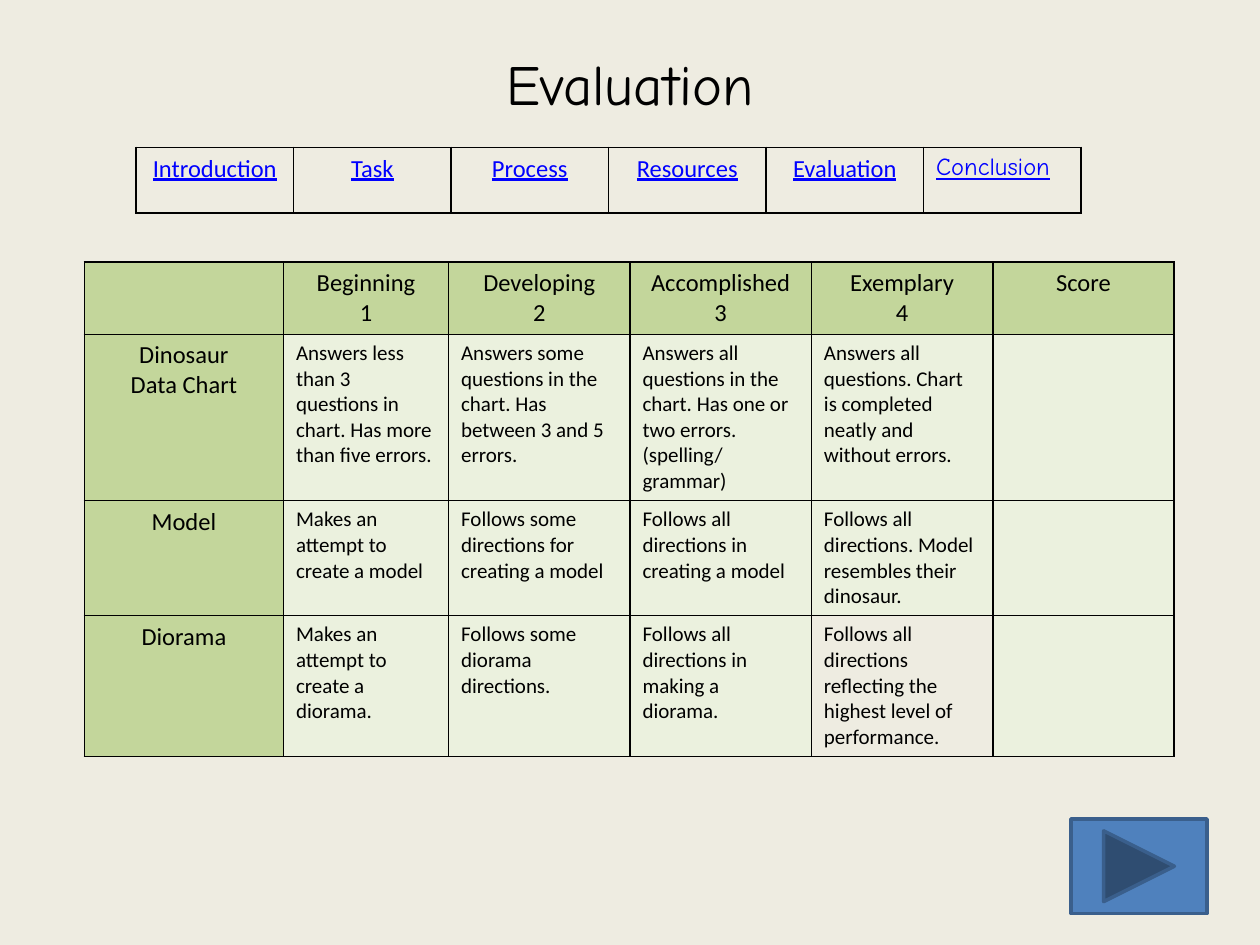
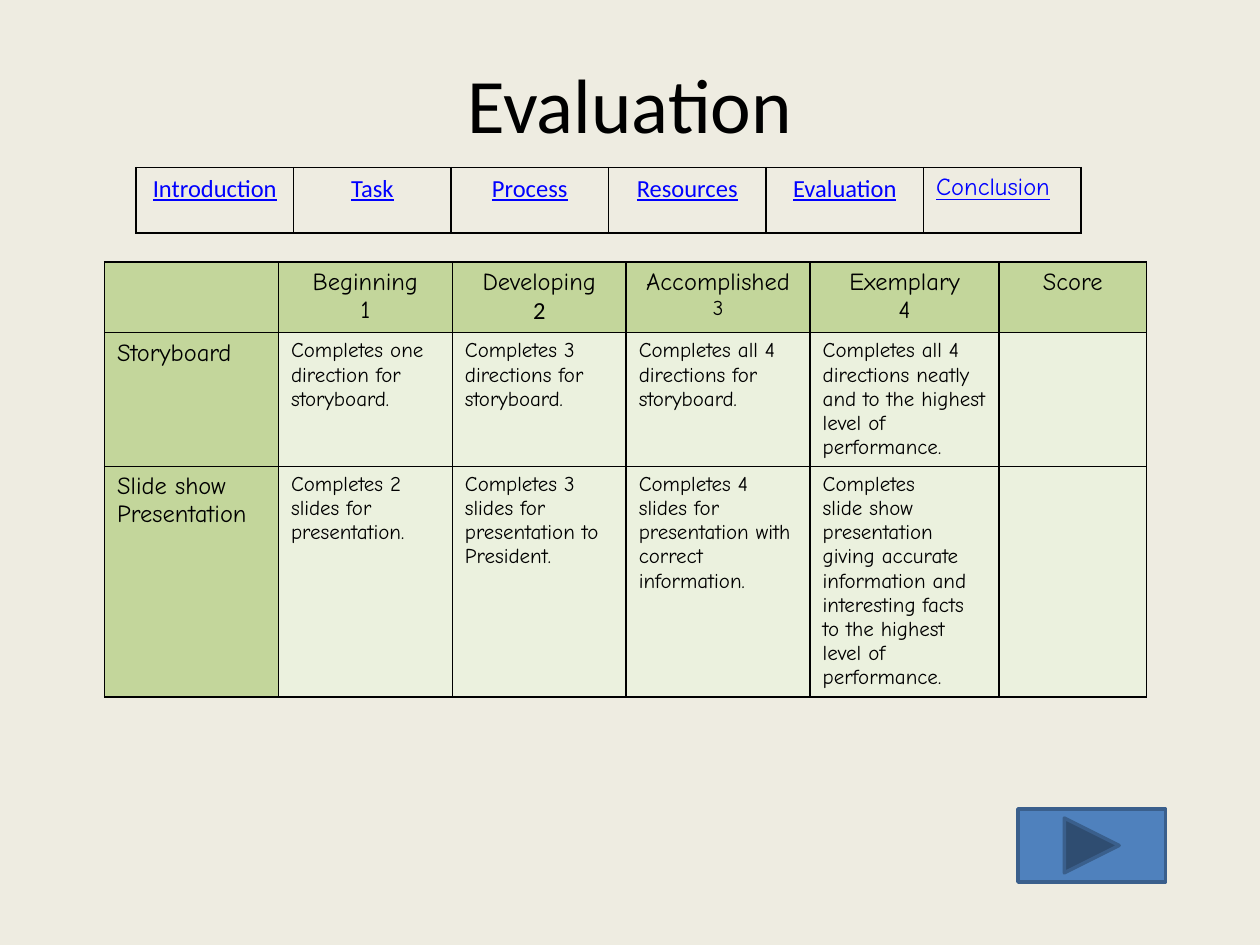
from lxml.etree import SubElement
from pptx import Presentation
from pptx.dml.color import RGBColor
from pptx.enum.shapes import MSO_SHAPE
from pptx.enum.text import MSO_ANCHOR, MSO_AUTO_SIZE, PP_ALIGN
from pptx.oxml.ns import qn
from pptx.util import Inches, Pt

BACKGROUND = "EEECE1"
BLACK = "000000"
LINK_BLUE = "0000FF"
HEADER_GREEN = "C3D69B"
CELL_GREEN = "EBF1DE"
BUTTON_BLUE = "4F81BD"
BUTTON_LINE = "3A5F8C"
PLAIN_FONT = "Calibri"
COMIC_FONT = "Comic Neue"

NAVIGATION = ["Introduction", "Task", "Process", "Resources", "Evaluation", "Conclusion"]
HEADINGS = ["", "Beginning\n1", "Developing\n2", "Accomplished\n3", "Exemplary\n4", "Score"]

PROJECT_RUBRIC = [
    HEADINGS,
    ["Dinosaur\nData Chart",
     "Answers less than 3 questions in chart. Has more than five errors.",
     "Answers some questions in the chart. Has between 3 and 5 errors.",
     "Answers all questions in the chart. Has one or two errors.\n(spelling/ grammar)",
     "Answers all questions. Chart is completed neatly and without errors.", ""],
    ["Model",
     "Makes an attempt to create a model",
     "Follows some directions for creating a model",
     "Follows all directions in creating a model",
     "Follows all directions. Model resembles their dinosaur.", ""],
    ["Diorama",
     "Makes an attempt to create a diorama.",
     "Follows some diorama directions.",
     "Follows all directions in making a diorama.",
     "Follows all directions reflecting the highest level of performance.", ""],
]
PRESENTATION_RUBRIC = [
    HEADINGS,
    ["Storyboard",
     "Completes one direction for storyboard.",
     "Completes 3 directions for storyboard.",
     "Completes all 4 directions for storyboard.",
     "Completes all 4 directions neatly and to the highest level of performance.", ""],
    ["Slide show Presentation",
     "Completes 2 slides for presentation.",
     "Completes 3 slides for presentation to President.",
     "Completes 4 slides for presentation with correct information.",
     "Completes\nslide show presentation giving accurate information and interesting "
     "facts to the highest level of performance.", ""],
]


def rgb(color):
    return RGBColor.from_string(color)


def format_paragraph(paragraph, font_name, size, color=BLACK, alignment=PP_ALIGN.LEFT):
    paragraph.alignment = alignment
    paragraph.font.name = font_name
    paragraph.font.size = Pt(size)
    paragraph.font.color.rgb = rgb(color)


def add_title(slide, height, font_name, size):
    title = slide.shapes.title
    title.left, title.top = Inches(0.5), Inches(0.3)
    title.width, title.height = Inches(9), Inches(height)
    title.text_frame.text = "Evaluation"
    title.text_frame.auto_size = MSO_AUTO_SIZE.NONE
    title.text_frame.vertical_anchor = MSO_ANCHOR.MIDDLE
    format_paragraph(title.text_frame.paragraphs[0], font_name, size,
                     alignment=PP_ALIGN.CENTER)
    return title


def add_borders(cell):
    properties = cell._tc.get_or_add_tcPr()
    for side in ("a:lnL", "a:lnR", "a:lnT", "a:lnB"):
        line = SubElement(properties, qn(side), w=str(Pt(1)))
        fill = SubElement(line, qn("a:solidFill"))
        SubElement(fill, qn("a:srgbClr"), val=BLACK)


def add_grid(slide, left, top, column_widths, row_heights):
    frame = slide.shapes.add_table(
        len(row_heights), len(column_widths), Inches(left), Inches(top),
        Inches(sum(column_widths)), Inches(sum(row_heights)))
    table = frame.table
    table.first_row = False
    table.horz_banding = False
    for column, width in zip(table.columns, column_widths):
        column.width = Inches(width)
    for row, height in zip(table.rows, row_heights):
        row.height = Inches(height)
    for cell in table.iter_cells():
        add_borders(cell)
        cell.fill.background()
    return table


def add_navigation(slide, top):
    table = add_grid(slide, 1.08, top, [1.25] * len(NAVIGATION), [0.52])
    for cell, label in zip(table.iter_cells(), NAVIGATION):
        cell.text = label
        paragraph = cell.text_frame.paragraphs[0]
        format_paragraph(paragraph, PLAIN_FONT, 14, LINK_BLUE, PP_ALIGN.CENTER)
        paragraph.font.underline = True
    paragraph.font.name = COMIC_FONT
    paragraph.alignment = PP_ALIGN.LEFT


def add_rubric(slide, left, column_widths, row_heights, rows, font_name, label_alignment):
    table = add_grid(slide, left, 2.08, column_widths, row_heights)
    for row_index, texts in enumerate(rows):
        for column_index, text in enumerate(texts):
            is_heading = row_index == 0
            is_label = is_heading or column_index == 0
            cell = table.cell(row_index, column_index)
            cell.fill.solid()
            cell.fill.fore_color.rgb = rgb(HEADER_GREEN if is_label else CELL_GREEN)
            cell.text = text
            alignment = PP_ALIGN.LEFT
            if is_label:
                alignment = PP_ALIGN.CENTER if is_heading else label_alignment
            for paragraph in cell.text_frame.paragraphs:
                format_paragraph(paragraph, font_name, 14 if is_label else 12,
                                 alignment=alignment)
    return table


def add_next_button(slide, left, top, width, height):
    button = slide.shapes.add_shape(
        MSO_SHAPE.ACTION_BUTTON_FORWARD_OR_NEXT,
        Inches(left), Inches(top), Inches(width), Inches(height))
    button.shadow.inherit = False
    button.fill.solid()
    button.fill.fore_color.rgb = rgb(BUTTON_BLUE)
    button.line.color.rgb = rgb(BUTTON_LINE)
    button.line.width = Pt(2)


def build_project_slide(slide):
    title = add_title(slide, 1.25, COMIC_FONT, 32.4)
    title.text_frame.vertical_anchor = MSO_ANCHOR.TOP
    title.text_frame.margin_top = Inches(0.09)
    add_navigation(slide, 1.17)
    add_next_button(slide, 8.5, 6.5, 1.08, 0.75)
    rubric = add_rubric(slide, 0.67, [1.58, 1.31] + [1.44] * 4, [0.57, 1.32, 0.91, 1.11],
                        PROJECT_RUBRIC, PLAIN_FONT, PP_ALIGN.CENTER)
    rubric.cell(3, 4).fill.background()


def build_presentation_slide(slide):
    add_title(slide, 1.03, PLAIN_FONT, 44)
    add_navigation(slide, 1.33)
    rubric = add_rubric(slide, 0.83, [1.38] * 3 + [1.46, 1.5, 1.17], [0.56, 1.06, 1.83],
                        PRESENTATION_RUBRIC, COMIC_FONT, PP_ALIGN.LEFT)
    rubric.cell(0, 2).text_frame.paragraphs[1].font.name = PLAIN_FONT
    rubric.cell(0, 3).text_frame.paragraphs[1].font.size = Pt(12)
    add_next_button(slide, 8.08, 6.42, 1.17, 0.58)


def main():
    presentation = Presentation()
    presentation.slide_width = Inches(10)
    presentation.slide_height = Inches(7.5)
    background = presentation.slide_master.background.fill
    background.solid()
    background.fore_color.rgb = rgb(BACKGROUND)
    title_only = presentation.slide_layouts.get_by_name("Title Only")
    for build_slide in (build_project_slide, build_presentation_slide):
        build_slide(presentation.slides.add_slide(title_only))
    presentation.save("out.pptx")


if __name__ == "__main__":
    main()
